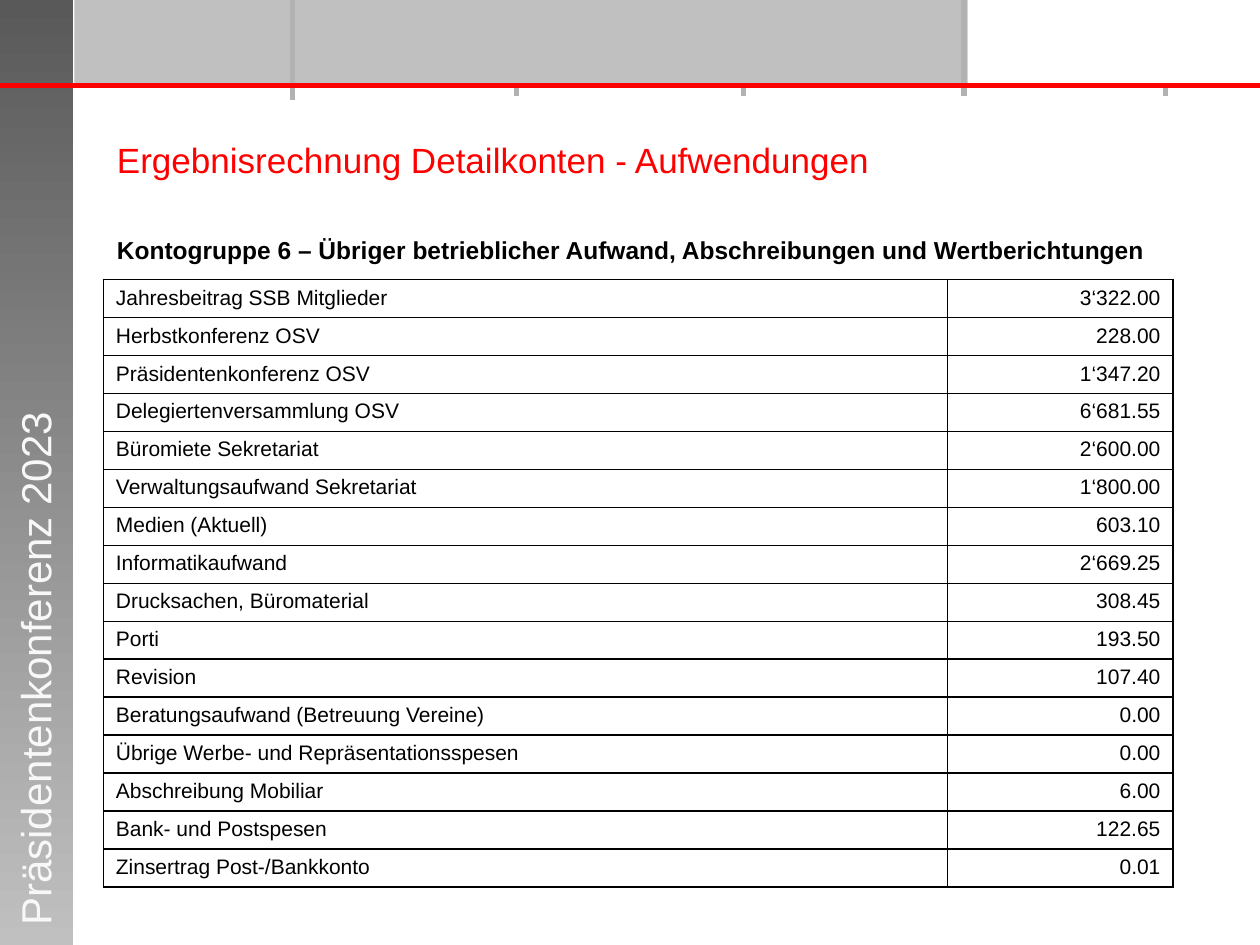
from lxml import etree
from pptx import Presentation
from pptx.dml.color import RGBColor
from pptx.enum import shapes, text
from pptx.oxml.ns import qn
from pptx.util import Inches, Pt

COLORS = {
    "red": "FF0000",
    "black": "000000",
    "white": "FFFFFF",
    "tick": "B2B2B2",
    "banner": "C0C0C0",
    "sidebar_dark": "595959",
    "sidebar_text": "F8F8F8",
}
FONT = "Arial"
RULE_Y = 0.68
EXPENSES = [
    ("Jahresbeitrag SSB Mitglieder", "3‘322.00"),
    ("Herbstkonferenz OSV", "228.00"),
    ("Präsidentenkonferenz OSV", "1‘347.20"),
    ("Delegiertenversammlung OSV", "6‘681.55"),
    ("Büromiete Sekretariat", "2‘600.00"),
    ("Verwaltungsaufwand Sekretariat", "1‘800.00"),
    ("Medien (Aktuell)", "603.10"),
    ("Informatikaufwand", "2‘669.25"),
    ("Drucksachen, Büromaterial", "308.45"),
    ("Porti", "193.50"),
    ("Revision", "107.40"),
    ("Beratungsaufwand (Betreuung Vereine)", "0.00"),
    ("Übrige Werbe- und Repräsentationsspesen", "0.00"),
    ("Abschreibung Mobiliar", "6.00"),
    ("Bank- und Postspesen", "122.65"),
    ("Zinsertrag Post-/Bankkonto", "0.01"),
]


def rgb(name):
    """Return the named colour."""
    return RGBColor.from_string(COLORS[name])


def add_run(paragraph, words, size, color, bold=False):
    """Append a formatted run to a paragraph."""
    run = paragraph.add_run()
    run.text = words
    run.font.name = FONT
    run.font.size = Pt(size)
    run.font.bold = bold
    run.font.color.rgb = rgb(color)


def add_line(slide, start, end, color):
    """Draw a straight 3 pt line without shadow."""
    line = slide.shapes.add_connector(
        shapes.MSO_CONNECTOR.STRAIGHT, *map(Inches, start + end))
    line.line.color.rgb = rgb(color)
    line.line.width = Pt(3)
    etree.SubElement(line._element.spPr, qn("a:effectLst"))


def add_panel(slide, left, top, width, height):
    """Add a borderless rectangle and return it for filling."""
    panel = slide.shapes.add_shape(
        shapes.MSO_SHAPE.RECTANGLE, *map(Inches, (left, top, width, height)))
    panel.shadow.inherit = False
    panel.line.fill.background()
    return panel


def add_text_box(slide, left, top, width, height):
    """Add an empty wrapping text box."""
    box = slide.shapes.add_textbox(*map(Inches, (left, top, width, height)))
    box.text_frame.word_wrap = True
    return box


def add_frame(slide):
    """Draw the sidebar, banner, ticks and red rule."""
    for x in (4.1, 5.9):
        add_line(slide, (x, 0), (x, 0.76), "tick")
    sidebar = add_panel(slide, 0, 0, 0.58, 7.5)
    sidebar.fill.gradient()
    sidebar.fill.gradient_angle = 270
    for stop, color in zip(sidebar.fill.gradient_stops, ("sidebar_dark", "banner")):
        stop.color.rgb = rgb(color)
    banner = add_panel(slide, 0.59, 0, 7.09, RULE_Y)
    banner.fill.solid()
    banner.fill.fore_color.rgb = rgb("banner")
    for x, top, bottom in ((2.32, 0, 0.79), (7.65, 0, 0.76), (9.25, RULE_Y, 0.76)):
        add_line(slide, (x, top), (x, bottom), "tick")
    add_line(slide, (0, RULE_Y), (10, RULE_Y), "red")


def add_event_name(slide):
    """Write the event name upwards along the sidebar."""
    event = add_text_box(slide, -1.89, 5.03, 4.33, 0.5)
    event.rotation = 270
    add_run(event.text_frame.paragraphs[0], "Präsidentenkonferenz 2023", 24, "sidebar_text")


def add_headings(slide):
    """Write the title and the account group."""
    frame = add_text_box(slide, 0.83, 1.05, 8.6, 1.1).text_frame
    add_run(frame.paragraphs[0], "Ergebnisrechnung Detailkonten - Aufwendungen", 20, "red")
    group = frame.add_paragraph()
    group.space_before = Pt(31)
    add_run(group, "Kontogruppe 6 – Übriger betrieblicher Aufwand, "
            "Abschreibungen und Wertberichtungen", 14, "black", bold=True)


def border_cell(cell):
    """Put a 1 pt black border on every side of a cell."""
    properties = cell._tc.get_or_add_tcPr()
    for index, side in enumerate(("a:lnL", "a:lnR", "a:lnT", "a:lnB")):
        border = etree.Element(qn(side), w=str(Pt(1)))
        fill = etree.SubElement(border, qn("a:solidFill"))
        etree.SubElement(fill, qn("a:srgbClr"), val=COLORS["black"])
        properties.insert(index, border)


def add_expense_table(slide):
    """Add the table of accounts and amounts."""
    table = slide.shapes.add_table(
        len(EXPENSES), 2, *map(Inches, (0.82, 2.22, 8.49, 4.82))).table
    table.first_row = False
    table.horz_banding = False
    for column, width in zip(table.columns, (6.7, 1.79)):
        column.width = Inches(width)
    alignments = (text.PP_ALIGN.LEFT, text.PP_ALIGN.RIGHT)
    for row, expense in zip(table.rows, EXPENSES):
        for cell, words, alignment in zip(row.cells, expense, alignments):
            cell.fill.solid()
            cell.fill.fore_color.rgb = rgb("white")
            border_cell(cell)
            paragraph = cell.text_frame.paragraphs[0]
            paragraph.alignment = alignment
            add_run(paragraph, words, 12, "black")


def main():
    """Build and save the slide."""
    presentation = Presentation()
    presentation.slide_width = Inches(10)
    presentation.slide_height = Inches(7.5)
    slide = presentation.slides.add_slide(presentation.slide_layouts[6])
    add_frame(slide)
    add_event_name(slide)
    add_headings(slide)
    add_expense_table(slide)
    presentation.save("out.pptx")


if __name__ == "__main__":
    main()
